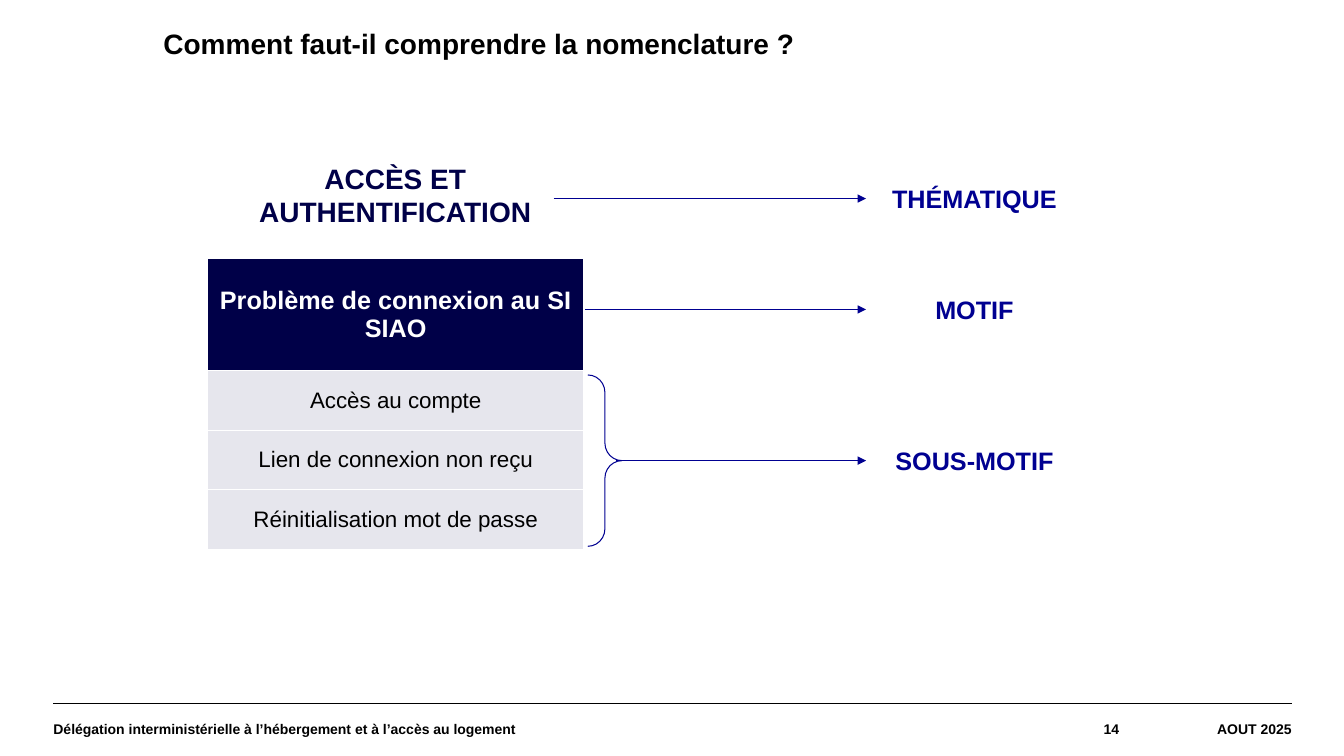
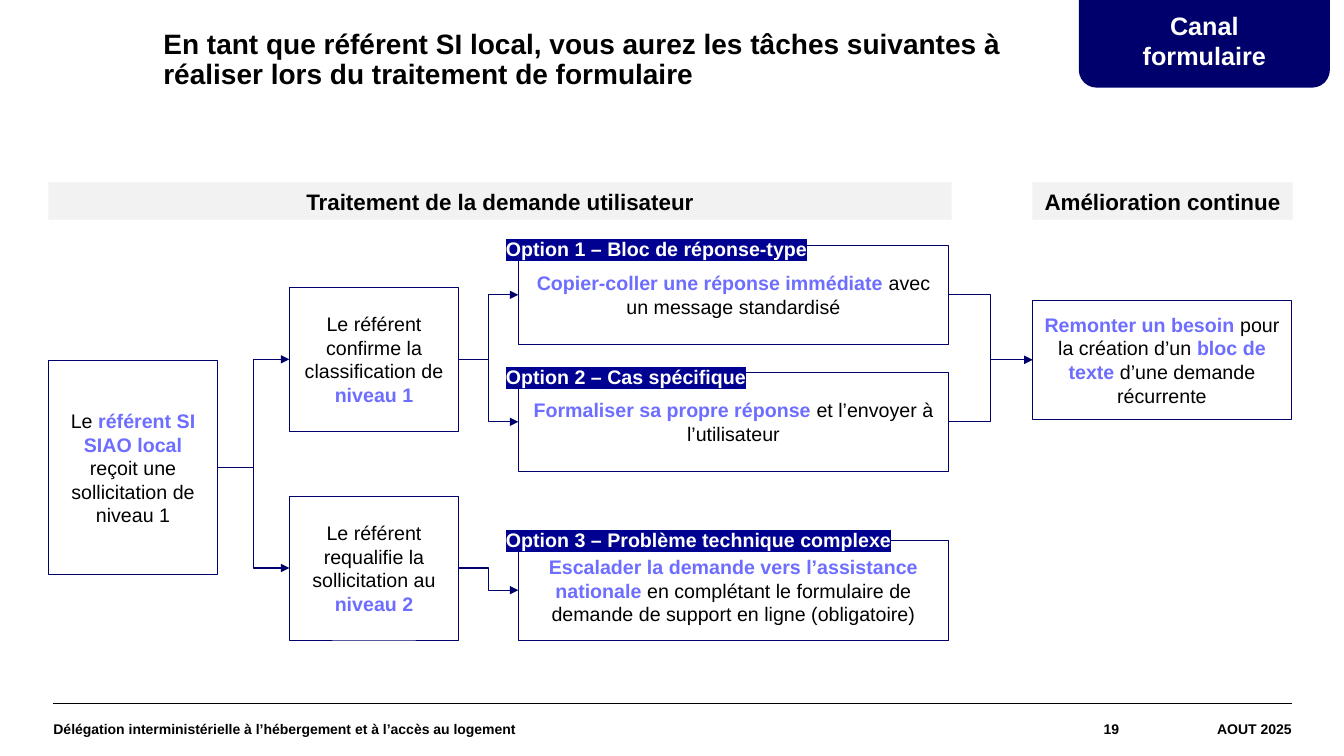
from lxml import etree
from pptx import Presentation
from pptx.dml.color import RGBColor
from pptx.enum.shapes import MSO_CONNECTOR, MSO_SHAPE
from pptx.enum.text import MSO_ANCHOR, MSO_AUTO_SIZE, PP_ALIGN
from pptx.oxml.ns import qn
from pptx.util import Inches, Pt

LEFT, CENTER, RIGHT = PP_ALIGN.LEFT, PP_ALIGN.CENTER, PP_ALIGN.RIGHT
TOP, MIDDLE = MSO_ANCHOR.TOP, MSO_ANCHOR.MIDDLE
STRAIGHT, ELBOW = MSO_CONNECTOR.STRAIGHT, MSO_CONNECTOR.ELBOW
RECTANGLE, ROUNDED, BRACE = MSO_SHAPE.RECTANGLE, MSO_SHAPE.ROUNDED_RECTANGLE, MSO_SHAPE.RIGHT_BRACE
LEFT_SITE, RIGHT_SITE = 1, 3

FONT = "Arial"
COLORS = {
    "black": "000000", "white": "FFFFFF", "midnight": "000048", "navy": "00006D",
    "blue": "000091", "accent": "6D6DFF", "band": "F2F2F2", "row": "E6E6ED",
}

FOOTER = "Délégation interministérielle à l’hébergement et à l’accès au logement"
DATE = "AOUT 2025"

NOMENCLATURE_TITLE = "Comment faut-il comprendre la nomenclature ?"
THEME = "ACCÈS ET AUTHENTIFICATION"
REASON = "Problème de connexion au SI SIAO"
SUB_REASONS = ["Accès au compte", "Lien de connexion non reçu", "Réinitialisation mot de passe"]
LEVELS = [("THÉMATIQUE", 5.49, 1.97), ("MOTIF", 5.8, 3.07), ("SOUS-MOTIF", 6.11, 4.57)]
LEVEL_LEFT = 8.59

TASKS_TITLE = ("En tant que référent SI local, vous aurez les tâches suivantes à réaliser "
               "lors du traitement de formulaire")
CHANNEL = "Canal formulaire"
PHASES = [("Traitement de la demande utilisateur", 0.48, 8.96), ("Amélioration continue", 10.24, 2.58)]
STEPS = {
    "request": ("Le *référent SI SIAO local* reçoit une sollicitation de niveau 1", 0.48, 3.58, 1.68, 2.12),
    "level 1": ("Le référent confirme la classification de *niveau 1*", 2.87, 2.85, 1.68, 1.43),
    "level 2": ("Le référent requalifie la sollicitation au *niveau 2*", 2.87, 4.92, 1.68, 1.43),
    "option 1": ("*Copier-coller une réponse immédiate* avec un message standardisé", 5.14, 2.43, 4.27, 0.99),
    "option 2": ("*Formaliser sa propre réponse* et l’envoyer à l’utilisateur", 5.14, 3.69, 4.27, 0.99),
    "option 3": ("*Escalader la demande vers l’assistance nationale* en complétant le formulaire "
                 "de demande de support en ligne (obligatoire)", 5.14, 5.36, 4.27, 0.99),
    "need": ("*Remonter un besoin* pour la création d’un *bloc de texte* d’une demande récurrente",
             10.24, 2.98, 2.57, 1.18),
}
OPTION_LABELS = [
    ("Option 1 – Bloc de réponse-type", 2.3),
    ("Option 2 – Cas spécifique", 3.57),
    ("Option 3 – Problème technique complexe", 5.19),
]
FLOWS = [
    ("request", "level 1"), ("request", "level 2"),
    ("level 1", "option 1"), ("level 1", "option 2"), ("level 2", "option 3"),
    ("option 1", "need"), ("option 2", "need"),
]


def rgb(name):
    return RGBColor.from_string(COLORS[name])


def write(frame, text, size=14, color="black", bold=False, align=LEFT, anchor=TOP,
          insets=(0.1, 0.05), spacing=None, highlight=None):
    frame.word_wrap = True
    frame.auto_size = MSO_AUTO_SIZE.NONE
    frame.vertical_anchor = anchor
    frame.margin_left = frame.margin_right = Inches(insets[0])
    frame.margin_top = frame.margin_bottom = Inches(insets[1])
    fill_paragraph(frame.paragraphs[0], text, size, color, bold, align, spacing, highlight)


def fill_paragraph(paragraph, text, size, color, bold, align, spacing=None, highlight=None):
    paragraph.alignment = align
    if spacing:
        paragraph.line_spacing = spacing
    for index, part in enumerate(text.split("*")):
        if not part:
            continue
        emphasized = index % 2 == 1
        run = paragraph.add_run()
        run.text = part
        font = run.font
        font.size, font.name, font.bold = Pt(size), FONT, bold or emphasized
        font.color.rgb = rgb("accent" if emphasized else color)
        if highlight:
            mark = etree.Element(qn("a:highlight"))
            etree.SubElement(mark, qn("a:srgbClr"), val=COLORS[highlight])
            run._r.rPr.find(qn("a:solidFill")).addnext(mark)


def add_text(slide, text, at, **style):
    box = slide.shapes.add_textbox(*map(Inches, at))
    write(box.text_frame, text, **style)


def add_box(slide, at, kind=RECTANGLE, fill=None, line=None, width=0.5):
    box = slide.shapes.add_shape(kind, *map(Inches, at))
    box.shadow.inherit = False
    if fill:
        box.fill.solid()
        box.fill.fore_color.rgb = rgb(fill)
    else:
        box.fill.background()
    if line:
        box.line.color.rgb = rgb(line)
        box.line.width = Pt(width)
    else:
        box.line.fill.background()
    return box


def add_line(slide, start, end, color, width=0.75, kind=STRAIGHT, arrow=True):
    line = slide.shapes.add_connector(kind, *start, *end)
    line.line.color.rgb = rgb(color)
    line.line.width = Pt(width)
    if arrow:
        etree.SubElement(line.line._get_or_add_ln(), qn("a:tailEnd"), type="triangle")
    etree.SubElement(line._element.spPr, qn("a:effectLst"))
    return line


def link(slide, source, target):
    start = (source.left + source.width, source.top + source.height // 2)
    end = (target.left, target.top + target.height // 2)
    flow = add_line(slide, start, end, "navy", kind=ELBOW)
    flow.begin_connect(source, RIGHT_SITE)
    flow.end_connect(target, LEFT_SITE)


def new_slide(prs, title, number, title_width):
    slide = prs.slides.add_slide(prs.slide_layouts[5])
    heading = slide.shapes.title
    heading.left, heading.top = Inches(1.62), Inches(0.3)
    heading.width, heading.height = Inches(title_width), Inches(1.05)
    write(heading.text_frame, title, size=20, bold=True, insets=(0, 0), spacing=0.9)
    add_line(slide, (Inches(0.53), Inches(6.98)), (Inches(12.81), Inches(6.98)),
             "black", width=0.8, arrow=False)
    for text, left, width, align in [(FOOTER, 0.53, 8.61, LEFT), (number, 9.13, 1.97, RIGHT),
                                     (DATE, 11.1, 1.71, RIGHT)]:
        add_text(slide, text, (left, 6.97, width, 0.53), size=10, bold=True,
                 align=align, anchor=MIDDLE, insets=(0, 0))
    return slide


def build_nomenclature(prs):
    slide = new_slide(prs, NOMENCLATURE_TITLE, "14", 11.23)
    add_text(slide, THEME, (1.8, 1.55, 4.24, 0.85), size=20, color="midnight", bold=True, align=CENTER)

    rows = [REASON] + SUB_REASONS
    table = slide.shapes.add_table(len(rows), 1, *map(Inches, (2.06, 2.56, 3.73, 2.89))).table
    table.horz_banding = False
    for index, text in enumerate(rows):
        header = index == 0
        table.rows[index].height = Inches(1.12 if header else 0.59)
        cell = table.cell(index, 0)
        cell.fill.solid()
        cell.fill.fore_color.rgb = rgb("midnight" if header else "row")
        cell.vertical_anchor = MIDDLE
        cell.margin_left = cell.margin_right = Inches(0.04)
        cell.margin_top = cell.margin_bottom = Inches(0.05)
        fill_paragraph(cell.text_frame.paragraphs[0], text, 18 if header else 16,
                       "white" if header else "black", header, CENTER)

    for text, start, middle in LEVELS:
        add_line(slide, (Inches(start), Inches(middle)), (Inches(LEVEL_LEFT), Inches(middle)), "blue")
        add_text(slide, text, (LEVEL_LEFT, middle - 0.2, 2.15, 0.4),
                 size=18, color="blue", bold=True, align=CENTER)
    brace = add_box(slide, (5.83, 3.72, 0.34, 1.7), BRACE, line="blue", width=0.75)
    brace.adjustments[0] = 0.51


def build_tasks(prs):
    slide = new_slide(prs, TASKS_TITLE, "19", 8.99)
    for text, left, width in PHASES:
        band = add_box(slide, (left, 1.81, width, 0.37), fill="band")
        write(band.text_frame, text, size=16, bold=True, align=CENTER, anchor=MIDDLE, insets=(0, 0.05))

    boxes = {}
    for key, (text, *at) in STEPS.items():
        boxes[key] = add_box(slide, at, fill="white", line="navy")
        write(boxes[key].text_frame, text, align=CENTER, anchor=MIDDLE)
    for source, target in FLOWS:
        link(slide, boxes[source], boxes[target])
    for text, top in OPTION_LABELS:
        add_text(slide, text, (4.92, top, 4.16, 0.34), color="white", bold=True, highlight="blue")

    add_box(slide, (10.7, -0.19, 2.49, 1.06), ROUNDED, fill="navy")
    add_text(slide, CHANNEL, (10.97, 0.05, 1.95, 0.71), size=18, color="white", bold=True, align=CENTER)


def main():
    prs = Presentation()
    prs.slide_width, prs.slide_height = Inches(13.33), Inches(7.5)
    build_nomenclature(prs)
    build_tasks(prs)
    prs.save("out.pptx")


if __name__ == "__main__":
    main()
